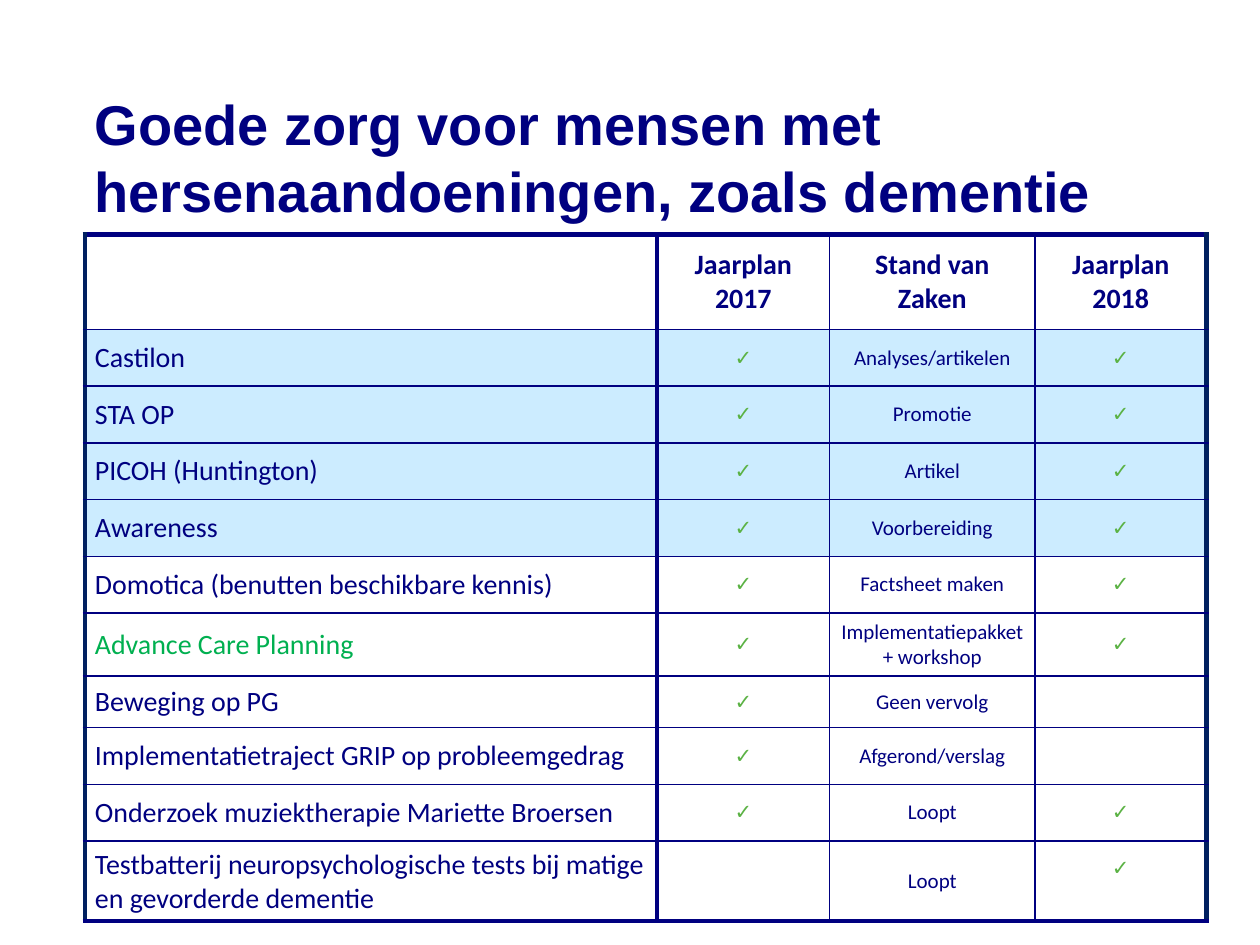
from lxml import etree
from pptx import Presentation
from pptx.dml.color import RGBColor
from pptx.enum.text import MSO_ANCHOR, PP_ALIGN
from pptx.oxml.ns import qn
from pptx.util import Pt

MIDDLE = MSO_ANCHOR.MIDDLE
LEFT, CENTER = PP_ALIGN.LEFT, PP_ALIGN.CENTER
NAVY, EDGE, BLUE, WHITE = "000080", "002060", "CCECFF", "FFFFFF"
GREEN, TICK = "00B050", "5BB244"


def write(par, text, size, color, bold=False, font="Calibri"):
    run = par.add_run()
    run.text = text
    run.font.name = font
    run.font.size = Pt(size)
    run.font.bold = bold
    run.font.color.rgb = RGBColor.from_string(color)


def rule(cell, side, color, width):
    line = etree.SubElement(cell._tc.get_or_add_tcPr(), qn("a:ln" + side), w=str(Pt(width)))
    fill = etree.SubElement(line, qn("a:solidFill"))
    etree.SubElement(fill, qn("a:srgbClr"), val=color)


prs = Presentation()
prs.slide_width, prs.slide_height = Pt(720), Pt(540)
slide = prs.slides.add_slide(prs.slide_layouts[6])

# Title
title = slide.shapes.add_textbox(Pt(54), Pt(49), Pt(674.6), Pt(81.4)).text_frame
title.word_wrap = True
title.vertical_anchor = MIDDLE
title.margin_left = title.margin_right = title.margin_top = title.margin_bottom = 0
write(title.paragraphs[0], "Goede zorg voor mensen met hersenaandoeningen, zoals dementie",
      32, NAVY, True, "Arial")

# Table content: project, plan 2017, status, plan 2018
rows = [
    ("", "Jaarplan\n2017", "Stand van Zaken", "Jaarplan 2018"),
    ("Castilon", "✓", "Analyses/artikelen", "✓"),
    ("STA OP", "✓", "Promotie", "✓"),
    ("PICOH (Huntington)", "✓", "Artikel", "✓"),
    ("Awareness", "✓", "Voorbereiding", "✓"),
    ("Domotica (benutten beschikbare kennis)", "✓", "Factsheet maken", "✓"),
    ("Advance Care Planning", "✓", "Implementatiepakket + workshop", "✓"),
    ("Beweging op PG", "✓", "Geen vervolg", ""),
    ("Implementatietraject GRIP op probleemgedrag", "✓", "Afgerond/verslag", ""),
    ("Onderzoek muziektherapie Mariette Broersen", "✓", "Loopt", "✓"),
    ("Testbatterij neuropsychologische tests bij matige en gevorderde dementie",
     "", "Loopt", "✓"),
]
widths = [327, 98.6, 117.4, 98]
heights = [54.4] + [32.4] * 6 + [29.5] + [32.4] * 3
last = len(rows) - 1

table = slide.shapes.add_table(len(rows), len(widths), Pt(48.5), Pt(133.9),
                               Pt(sum(widths)), Pt(sum(heights))).table
table.first_row = table.horz_banding = False
for col, width in zip(table.columns, widths):
    col.width = Pt(width)
for row, height in zip(table.rows, heights):
    row.height = Pt(height)

for r, texts in enumerate(rows):
    for c, text in enumerate(texts):
        cell = table.cell(r, c)
        cell.vertical_anchor = MIDDLE
        cell.margin_left = cell.margin_right = Pt(5.76)
        cell.margin_top = cell.margin_bottom = Pt(3.6)

        # Thick outer frame and first divider, thin lines elsewhere
        rule(cell, "L", EDGE if c == 0 else NAVY, 3 if c < 2 else 1)
        rule(cell, "R", EDGE if c == 3 else NAVY, 3 if c in (0, 3) else 1)
        rule(cell, "T", NAVY, 3 if r == 0 else 1)
        rule(cell, "B", NAVY, 3 if r == last else 1)
        cell.fill.solid()
        cell.fill.fore_color.rgb = RGBColor.from_string(BLUE if 1 <= r <= 4 else WHITE)

        # Text
        if not text:
            continue
        size = 16 if r == 0 or c == 0 else 12
        color = TICK if text == "✓" else GREEN if (r, c) == (6, 0) else NAVY
        frame = cell.text_frame
        for i, part in enumerate(text.split("\n")):
            par = frame.add_paragraph() if i else frame.paragraphs[0]
            par.alignment = CENTER if c else LEFT
            write(par, part, size, color, r == 0 or text == "✓")

# The last tick sits a little above the middle
table.cell(last, 3).margin_bottom = Pt(18)

prs.save("out.pptx")
